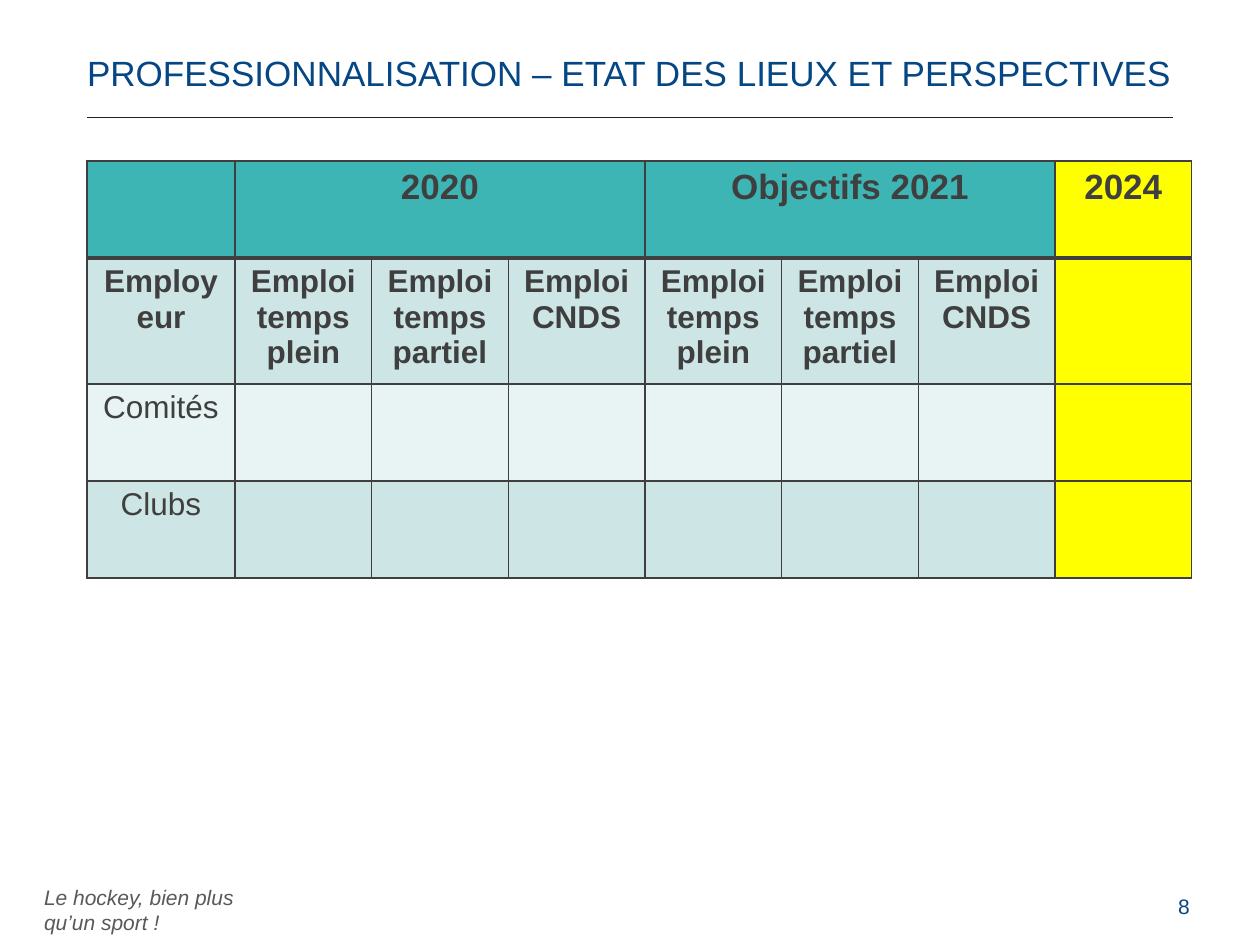
from dataclasses import dataclass

from lxml.etree import SubElement
from pptx import Presentation
from pptx.dml.color import RGBColor
from pptx.enum.shapes import MSO_CONNECTOR
from pptx.enum.text import MSO_ANCHOR, PP_ALIGN
from pptx.oxml.ns import qn
from pptx.util import Pt

PX = 914400 / 126  # EMU in one px


@dataclass(frozen=True)
class Theme:
    font: str = "Arial"
    blue: str = "054684"
    grey: str = "595959"
    rule: str = "202020"
    ink: str = "3F3F3F"
    teal: str = "3DB5B5"
    pale: str = "CEE5E5"
    paler: str = "E8F3F3"
    yellow: str = "FFFF00"
    heading: int = 20
    body: int = 18
    small: int = 12


@dataclass(frozen=True)
class Row:
    height: int
    fill: str
    size: int
    bold: bool
    labels: tuple[str, ...]


@dataclass(frozen=True)
class Label:
    text: str
    frame: tuple[int, int, int, int]
    insets: tuple[int, int, int, int]  # left, top, right, bottom
    size: int
    color: str
    italic: bool = False
    wrap: bool = True
    spacing: float = 1.0
    anchor: MSO_ANCHOR = MSO_ANCHOR.TOP


THEME = Theme()
JOBS = ("Emploi temps plein", "Emploi temps partiel", "Emploi CNDS")
YEAR_SPANS = ((1, 3), (4, 6))
FIRST_COLUMN, TABLE_WIDTH, COLUMNS = 148, 1105, 8

LABELS = (
    Label("Le hockey, bien plus qu’un sport !", (44, 897, 246, 25), (0, 0, 0, 0),
          THEME.small, THEME.grey, italic=True, wrap=False, anchor=MSO_ANCHOR.MIDDLE),
    Label("PROFESSIONNALISATION – ETAT DES LIEUX ET PERSPECTIVES", (87, 50, 1105, 66),
          (0, 6, 13, 6), THEME.heading, THEME.blue, spacing=0.9),
    Label("8", (1165, 888, 59, 50), (13, 6, 13, 6), THEME.small, THEME.blue),
)

ROWS = (
    Row(97, THEME.teal, THEME.heading, True,
        ("", "2020", "", "", "Objectifs 2021", "", "", "2024")),
    Row(118, THEME.pale, THEME.body, True, ("Employeur", *JOBS, *JOBS, "")),
    Row(97, THEME.paler, THEME.body, False, ("Comités",) + ("",) * 7),
    Row(97, THEME.pale, THEME.body, False, ("Clubs",) + ("",) * 7),
)


def px(length: float) -> int:
    return round(length * PX)


def write(para, text: str, *, size: int, color: str, bold: bool = False,
          italic: bool = False, align: PP_ALIGN = PP_ALIGN.LEFT) -> None:
    para.alignment = align
    span = para.add_run()
    span.text = text
    span.font.name = THEME.font
    span.font.size = Pt(size)
    span.font.bold = bold
    span.font.italic = italic
    span.font.color.rgb = RGBColor.from_string(color)


def add_label(page, label: Label) -> None:
    box = page.shapes.add_textbox(*map(px, label.frame))
    frame = box.text_frame
    frame.word_wrap = label.wrap
    frame.vertical_anchor = label.anchor
    (frame.margin_left, frame.margin_top,
     frame.margin_right, frame.margin_bottom) = map(px, label.insets)
    para = frame.paragraphs[0]
    para.line_spacing = label.spacing
    write(para, label.text, size=label.size, color=label.color, italic=label.italic)


def add_rule(page, left: int, right: int, top: int) -> None:
    line = page.shapes.add_connector(
        MSO_CONNECTOR.STRAIGHT, px(left), px(top), px(right), px(top))
    line.line.color.rgb = RGBColor.from_string(THEME.rule)
    line.line.width = Pt(0.5)
    SubElement(line._element.spPr, qn("a:effectLst"))


def set_borders(cell, top: int, bottom: int) -> None:
    properties = cell._tc.get_or_add_tcPr()
    widths = {"a:lnL": 1, "a:lnR": 1, "a:lnT": top, "a:lnB": bottom}
    for side, width in widths.items():
        border = SubElement(properties, qn(side), w=str(Pt(width)))
        fill = SubElement(border, qn("a:solidFill"))
        SubElement(fill, qn("a:srgbClr"), val=THEME.ink)


def add_jobs_table(page, left: int, top: int) -> None:
    height = sum(row.height for row in ROWS)
    table = page.shapes.add_table(
        len(ROWS), COLUMNS, px(left), px(top), px(TABLE_WIDTH), px(height)).table
    other_width = (TABLE_WIDTH - FIRST_COLUMN) / (COLUMNS - 1)
    for index, column in enumerate(table.columns):
        column.width = px(other_width if index else FIRST_COLUMN)

    for row_index, row in enumerate(ROWS):
        table.rows[row_index].height = px(row.height)
        for column_index, text in enumerate(row.labels):
            cell = table.cell(row_index, column_index)
            # Borders come before the fill in the cell properties
            set_borders(cell, top=3 if row_index == 1 else 1,
                        bottom=3 if row_index == 0 else 1)
            color = THEME.yellow if column_index == COLUMNS - 1 else row.fill
            cell.fill.solid()
            cell.fill.fore_color.rgb = RGBColor.from_string(color)
            if text:
                write(cell.text_frame.paragraphs[0], text, size=row.size,
                      color=THEME.ink, bold=row.bold, align=PP_ALIGN.CENTER)

    for first, last in YEAR_SPANS:
        table.cell(0, first).merge(table.cell(0, last))


def main() -> None:
    deck = Presentation()
    deck.slide_width, deck.slide_height = px(1260), px(945)
    page = deck.slides.add_slide(deck.slide_layouts[6])

    # Title, footer and page number
    for label in LABELS:
        add_label(page, label)
    add_rule(page, left=87, right=1173, top=117)

    # Jobs by employer and year
    add_jobs_table(page, left=87, top=161)
    deck.save("out.pptx")


if __name__ == "__main__":
    main()
